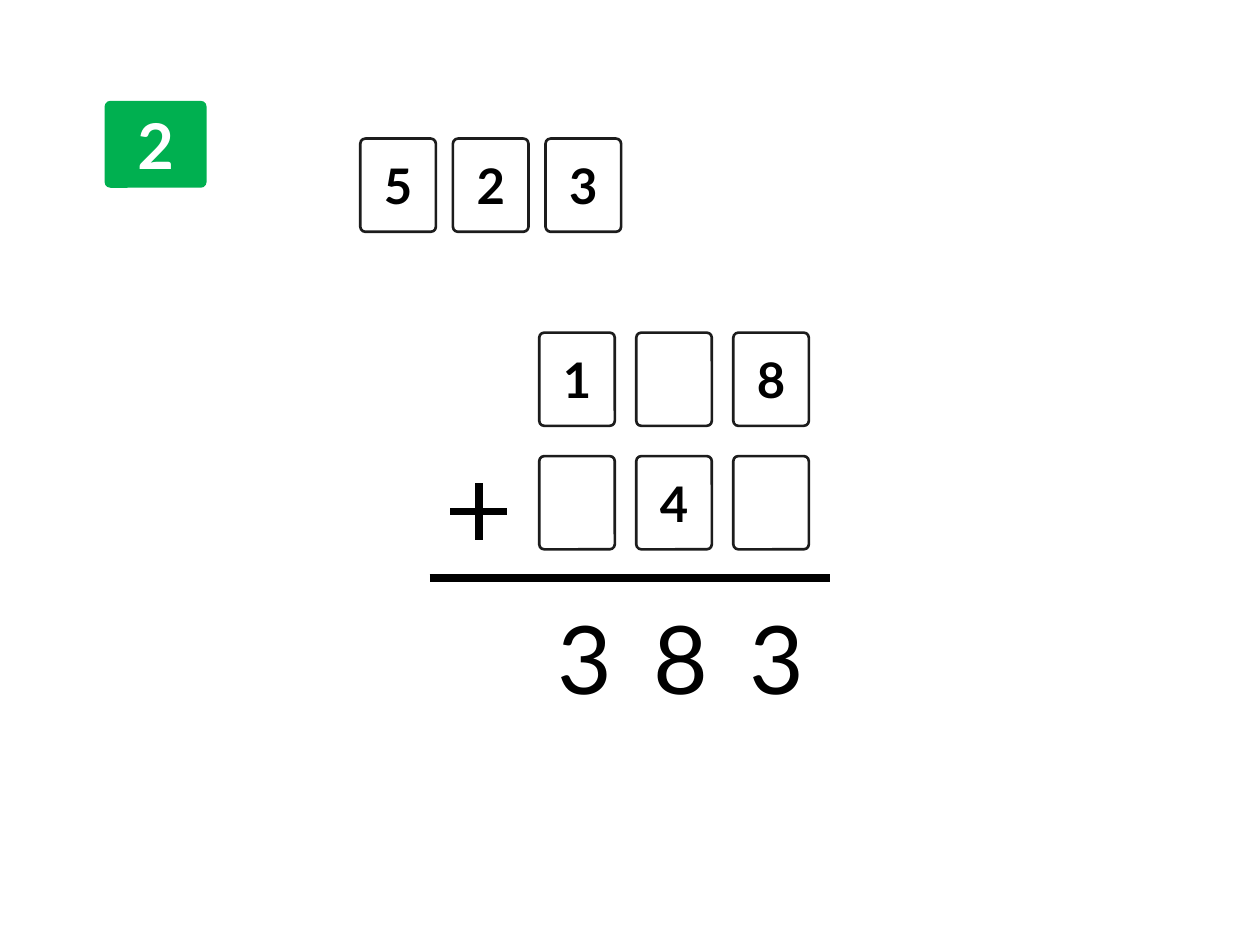
from lxml import etree
from pptx import Presentation
from pptx.dml.color import RGBColor
from pptx.enum.shapes import MSO_CONNECTOR, MSO_SHAPE
from pptx.enum.text import MSO_ANCHOR, MSO_AUTO_SIZE, PP_ALIGN
from pptx.oxml.ns import qn
from pptx.util import Inches, Pt

ROUNDED = MSO_SHAPE.ROUNDED_RECTANGLE
STRAIGHT = MSO_CONNECTOR.STRAIGHT
MIDDLE = MSO_ANCHOR.MIDDLE
GROW = MSO_AUTO_SIZE.SHAPE_TO_FIT_TEXT
CENTER = PP_ALIGN.CENTER

FONT = "Lato"
COLORS = {"green": "00B050", "white": "FFFFFF", "black": "000000", "outline": "1C1C1C"}
CARD_W, CARD_H = 0.6, 0.74


def color(name):
    return RGBColor.from_string(COLORS[name])


def write(tf, text, size, ink, bold=False):
    tf.text = text
    p = tf.paragraphs[0]
    p.alignment = CENTER
    for r in p.runs:
        r.font.name = FONT
        r.font.size = Pt(size)
        r.font.bold = bold
        r.font.color.rgb = color(ink)


def add_tile(s, x, y, w, h, text, size, fill, ink, outline=None):
    """Rounded box with a centred bold digit; empty text leaves it blank."""
    sp = s.shapes.add_shape(ROUNDED, Inches(x), Inches(y), Inches(w), Inches(h))
    sp.adjustments[0] = 0.067
    sp.shadow.inherit = False
    sp.fill.solid()
    sp.fill.fore_color.rgb = color(fill)
    if outline:
        sp.line.color.rgb = color(outline)
        sp.line.width = Pt(1.5)
    else:
        sp.line.fill.background()
    if text:
        sp.text_frame.vertical_anchor = MIDDLE
        write(sp.text_frame, text, size, ink, bold=True)


def add_card_row(s, x, y, step, digits):
    for i, digit in enumerate(digits):
        add_tile(s, x + i * step, y, CARD_W, CARD_H, digit, 28, "white", "black", "outline")


def add_line(s, x1, y1, x2, y2):
    line = s.shapes.add_connector(STRAIGHT, Inches(x1), Inches(y1), Inches(x2), Inches(y2))
    line.line.color.rgb = color("black")
    line.line.width = Pt(4.5)
    etree.SubElement(line._element.spPr, qn("a:effectLst"))


def add_plus(s, x, y, size):
    """Plus sign centred on x, y."""
    half = size / 2
    add_line(s, x, y - half, x, y + half)
    add_line(s, x - half, y, x + half, y)


def add_answer(s, x, y, step, digits):
    for i, digit in enumerate(digits):
        tb = s.shapes.add_textbox(Inches(x + i * step), Inches(y), Inches(0.55), Inches(1.01))
        tf = tb.text_frame
        tf.word_wrap = True
        tf.auto_size = GROW
        write(tf, digit, 54, "black")


def main():
    prs = Presentation()
    prs.slide_width, prs.slide_height = Inches(10), Inches(7.5)
    s = prs.slides.add_slide(prs.slide_layouts[6])

    add_tile(s, 0.83, 0.8, 0.81, 0.69, "2", 36, "green", "white")
    add_card_row(s, 2.86, 1.1, 0.735, ["5", "2", "3"])
    add_card_row(s, 4.28, 2.64, 0.77, ["1", "", "8"])
    add_card_row(s, 4.28, 3.62, 0.77, ["", "4", ""])
    add_plus(s, 3.8, 4.06, 0.45)
    add_line(s, 3.41, 4.59, 6.59, 4.59)
    add_answer(s, 4.33, 4.71, 0.76, ["3", "8", "3"])

    prs.save("out.pptx")


if __name__ == "__main__":
    main()
